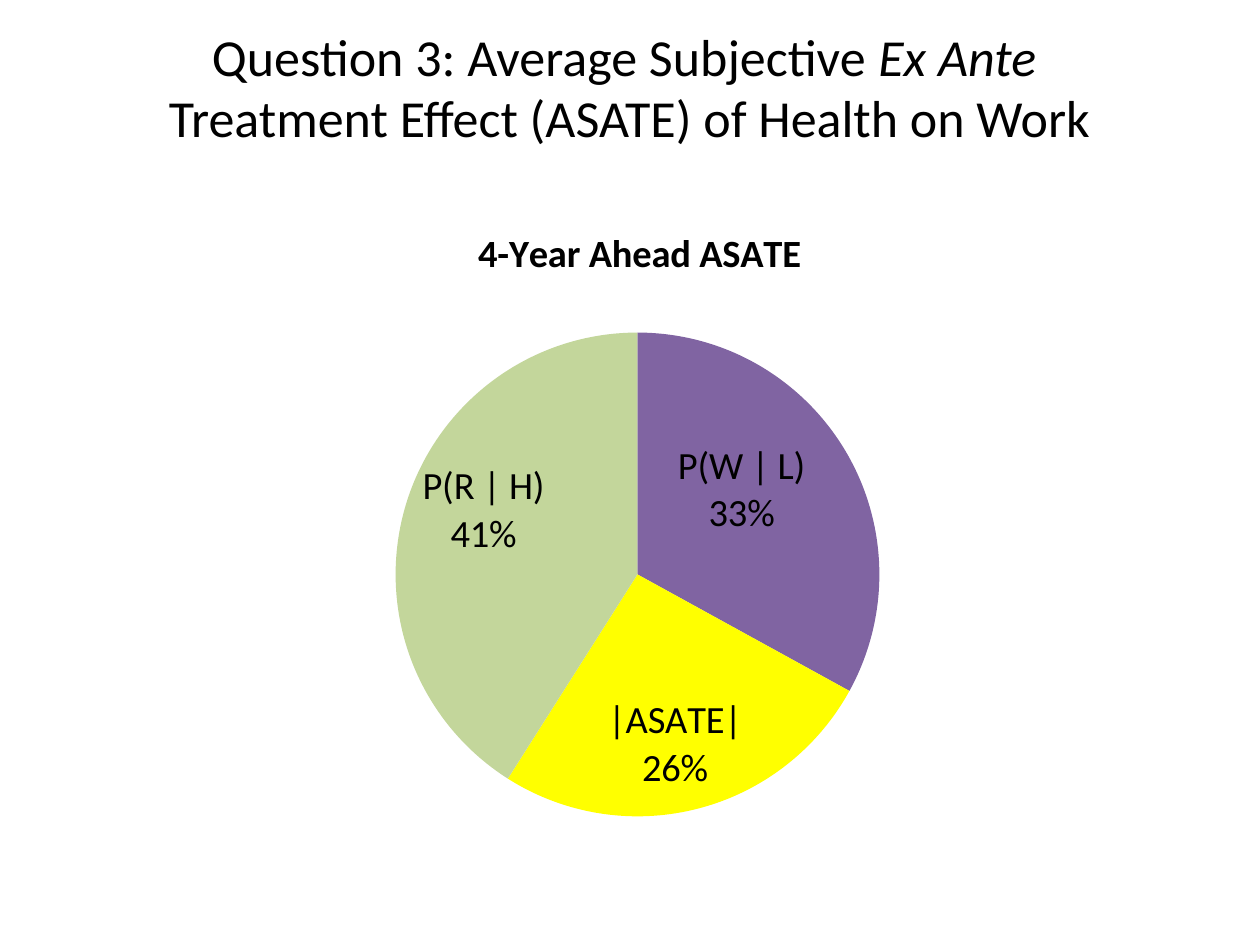
from lxml import etree
from pptx import Presentation
from pptx.chart.data import CategoryChartData
from pptx.dml.color import RGBColor
from pptx.enum.chart import XL_CHART_TYPE, XL_LABEL_POSITION
from pptx.enum.text import MSO_ANCHOR, MSO_AUTO_SIZE, PP_ALIGN
from pptx.oxml import parse_xml
from pptx.oxml.ns import qn
from pptx.util import Pt

PIE = XL_CHART_TYPE.PIE
MID = XL_LABEL_POSITION.CENTER
MIDDLE = MSO_ANCHOR.MIDDLE
FIXED = MSO_AUTO_SIZE.NONE
CENTER = PP_ALIGN.CENTER
FACE = "Calibri"
BLACK = "000000"
SPACE = "http://schemas.openxmlformats.org/drawingml/2006/chart"
# name, value, colour, label shift
SLICES = [
    ("P(W | L)", 33, "8064A2", (0, -0.03)),
    ("|ASATE|", 26, "FFFF00", (0.01, 0.07)),
    ("P(R | H)", 41, "C3D69B", (-0.05, -0.04)),
]


def paint(fill, shade):
    """Fill with a solid hex colour."""
    fill.solid()
    fill.fore_color.rgb = RGBColor.from_string(shade)


def style(font, size, bold=False):
    """Set face, size, weight and black colour of a font."""
    font.name, font.size, font.bold = FACE, Pt(size), bold
    paint(font.fill, BLACK)


def place(node, **parts):
    """Give a chart element a manual layout."""
    for old in node.findall(qn("c:layout")):
        node.remove(old)
    frame = etree.Element(qn("c:layout"))
    manual = etree.SubElement(frame, qn("c:manualLayout"))
    for tag, val in parts.items():
        etree.SubElement(manual, qn(f"c:{tag}")).set("val", str(val))
    return frame


def add_title(slide):
    """Write the two-line slide title."""
    title = slide.shapes.title
    title.left, title.top, title.width, title.height = Pt(0), Pt(0), Pt(720), Pt(99)
    frame = title.text_frame
    frame.auto_size, frame.word_wrap = FIXED, True
    frame.vertical_anchor = MIDDLE
    para = frame.paragraphs[0]
    para.alignment, para.line_spacing = CENTER, Pt(35)
    para.text = "Question 3: Average Subjective "
    term = para.add_run()
    term.text = "Ex Ante "
    para.add_line_break()
    para.add_run().text = "Treatment Effect (ASATE) of Health on Work"
    for run in para.runs:
        style(run.font, 29.7)
    term.font.italic = True


def add_label(labels, index, shift):
    """Add a shifted name and percent label for one slice."""
    label = parse_xml(
        f'<c:dLbl xmlns:c="{SPACE}"><c:idx val="{index}"/>'
        '<c:numFmt formatCode="0%" sourceLinked="0"/><c:dLblPos val="ctr"/>'
        '<c:showLegendKey val="0"/><c:showVal val="0"/><c:showCatName val="1"/>'
        '<c:showSerName val="0"/><c:showPercent val="1"/><c:showBubbleSize val="0"/>'
        "<c:separator>\n</c:separator></c:dLbl>")
    label.insert(1, place(label, x=shift[0], y=shift[1]))
    labels.insert(index, label)


def add_pie(slide):
    """Draw the pie chart with its title and labels."""
    data = CategoryChartData()
    data.categories = [name for name, *_ in SLICES]
    data.add_series("Series 1", [share for _, share, *_ in SLICES])
    chart = slide.shapes.add_chart(PIE, Pt(144), Pt(108), Pt(432), Pt(432), data).chart
    style(chart.font, 22)
    chart.has_legend = False
    chart.has_title = True
    head = chart.chart_title.text_frame
    head.text = "4-Year Ahead ASATE"
    style(head.paragraphs[0].runs[0].font, 22, True)
    name = chart.chart_title._element
    name.insert(1, place(name, xMode="edge", yMode="edge", x=0.29, y=0.04))
    plot = chart.plots[0]
    plot.vary_by_categories = True
    area = plot._element.getparent()
    area.insert(0, place(area, layoutTarget="inner", xMode="edge", yMode="edge",
                         x=0.19, y=0.19, w=0.64, h=0.64))
    series = plot.series[0]
    labels = series.data_labels
    labels.show_value, labels.show_category_name = False, True
    labels.show_percentage, labels.position = True, MID
    labels.number_format, labels.number_format_is_linked = "0%", False
    style(labels.font, 22)
    for index, (_, _, shade, shift) in enumerate(SLICES):
        paint(series.points[index].format.fill, shade)
        add_label(labels._element, index, shift)


def main():
    """Build and save the slide."""
    deck = Presentation()
    deck.slide_width, deck.slide_height = Pt(720), Pt(540)
    slide = deck.slides.add_slide(deck.slide_layouts[5])
    paint(slide.background.fill, "FFFFFF")
    add_title(slide)
    add_pie(slide)
    deck.save("out.pptx")


if __name__ == "__main__":
    main()
